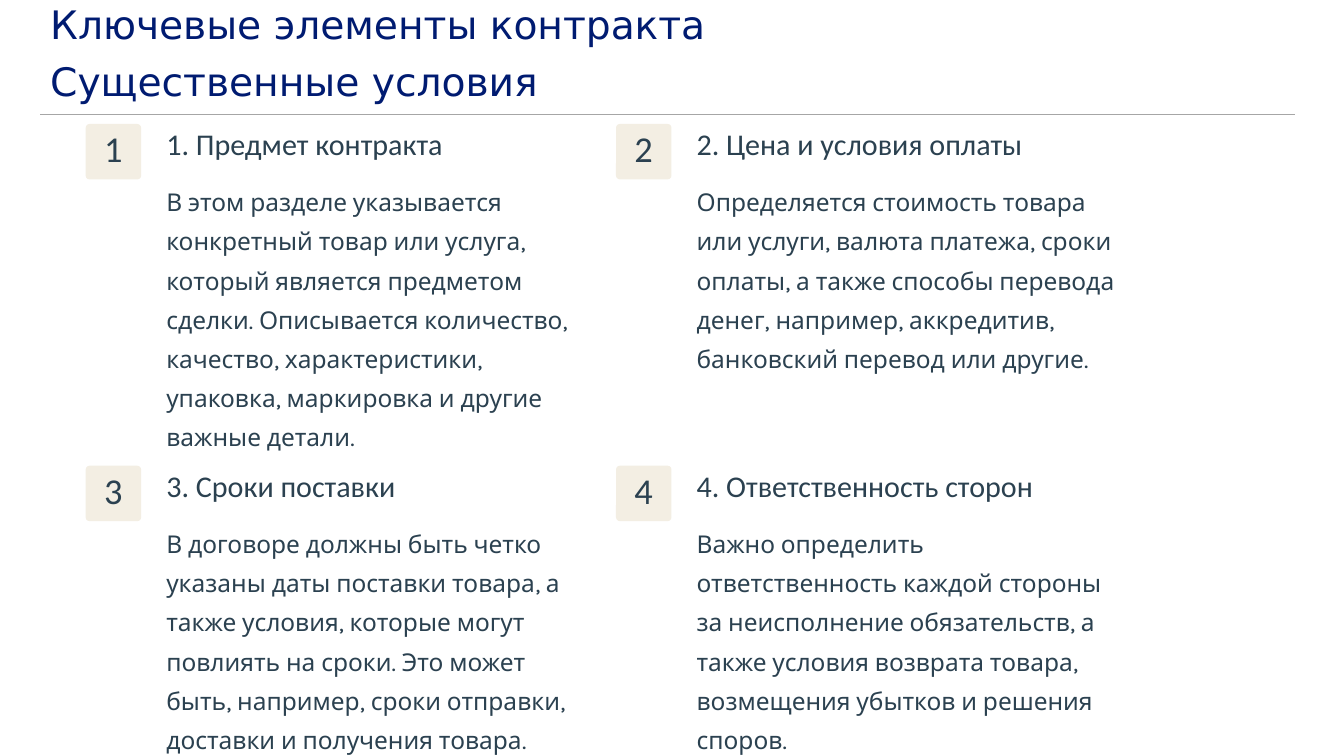
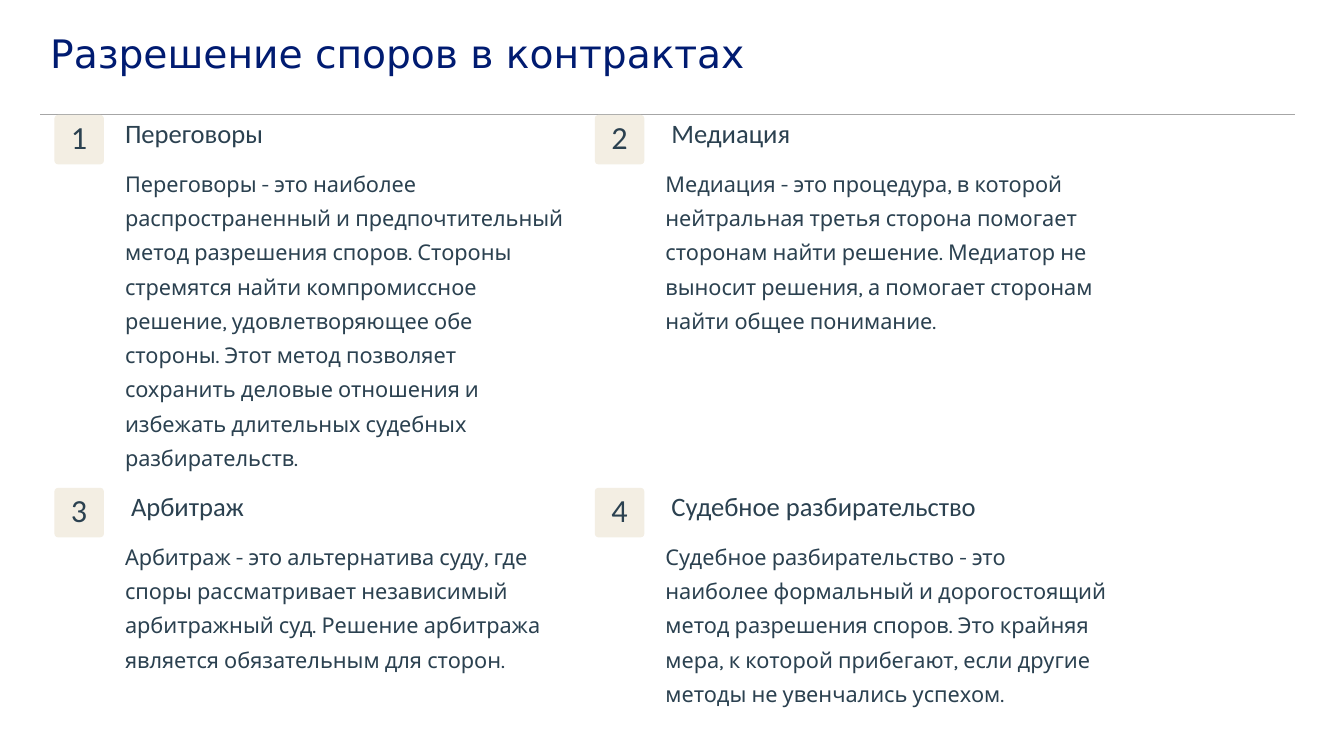
from dataclasses import dataclass
from pptx import Presentation
from pptx.dml.color import RGBColor
from pptx.enum.shapes import MSO_CONNECTOR, MSO_SHAPE
from pptx.enum.text import MSO_ANCHOR, PP_ALIGN
from pptx.oxml.ns import qn
from pptx.util import Inches, Pt

NAVY = RGBColor(0x00, 0x1B, 0x71)
SLATE = RGBColor(0x2B, 0x41, 0x50)
SAND = RGBColor(0xF3, 0xEE, 0xE3)
GREY = RGBColor(0xA6, 0xA6, 0xA6)


@dataclass
class Grid:
    left: float
    top: float
    col: float
    row: float
    badge: float
    indent: float
    drop: float
    width: float
    badge_size: float
    head_size: float
    head_line: float
    body_size: float
    body_line: float


class Deck:
    def __init__(self):
        self.prs = Presentation()
        self.prs.slide_width = Inches(13.33)
        self.prs.slide_height = Inches(7.5)
        self.slide = None

    def page(self, title):
        self.slide = self.prs.slides.add_slide(self.prs.slide_layouts[6])
        self.rule()
        frame = self.text(title, 0.4, 0.25, 12.44, 0.6, "DejaVu Sans", 28, NAVY, 0.9)
        frame.margin_left = frame.margin_right = Inches(0.1)
        frame.vertical_anchor = MSO_ANCHOR.MIDDLE
        for para in frame.paragraphs[1:]:
            para.space_before = Pt(11)

    def rule(self):
        line = self.slide.shapes.add_connector(
            MSO_CONNECTOR.STRAIGHT, Inches(0.4), Inches(1.14), Inches(12.84), Inches(1.14))
        line.line.color.rgb = GREY
        line.line.width = Pt(0.75)
        props = line._element.spPr
        props.append(props.makeelement(qn("a:effectLst"), {}))

    def style(self, frame, font, size, color, spacing):
        frame.word_wrap = True
        frame.margin_left = frame.margin_right = 0
        frame.margin_top = frame.margin_bottom = 0
        for para in frame.paragraphs:
            para.line_spacing = spacing
            for run in para.runs:
                run.font.name = font
                run.font.size = Pt(size)
                run.font.color.rgb = color

    def text(self, words, left, top, width, height, font, size, color, spacing):
        box = self.slide.shapes.add_textbox(
            Inches(left), Inches(top), Inches(width), Inches(height))
        box.text_frame.text = words
        self.style(box.text_frame, font, size, color, spacing)
        return box.text_frame

    def badge(self, number, left, top, side, size):
        shape = self.slide.shapes.add_shape(
            MSO_SHAPE.ROUNDED_RECTANGLE, Inches(left), Inches(top), Inches(side), Inches(side))
        shape.adjustments[0] = 0.07
        shape.shadow.inherit = False
        shape.fill.solid()
        shape.fill.fore_color.rgb = SAND
        shape.line.fill.background()
        frame = shape.text_frame
        frame.text = str(number)
        self.style(frame, "Calibri", size, SLATE, Pt(size))
        frame.vertical_anchor = MSO_ANCHOR.MIDDLE
        frame.paragraphs[0].alignment = PP_ALIGN.CENTER

    def items(self, grid, entries):
        for index, (head, body, shift) in enumerate(entries):
            row, col = divmod(index, 2)
            left = grid.left + col * grid.col
            top = grid.top + row * grid.row
            start = left + grid.indent
            self.badge(index + 1, left, top, grid.badge, grid.badge_size)
            self.text(head, start + shift, top, grid.width, 0.38,
                      "Calibri", grid.head_size, SLATE, Pt(grid.head_line))
            self.text(body, start, top + grid.drop, grid.width, 2.2,
                      "Karla", grid.body_size, SLATE, Pt(grid.body_line))


TERMS = [
    ("1. Предмет контракта",
     "В этом разделе указывается конкретный товар или услуга, который является предметом "
     "сделки. Описывается количество, качество, характеристики, упаковка, маркировка и "
     "другие важные детали.", 0),
    ("2. Цена и условия оплаты",
     "Определяется стоимость товара или услуги, валюта платежа, сроки оплаты, а также "
     "способы перевода денег, например, аккредитив, банковский перевод или другие.", 0),
    ("3. Сроки поставки",
     "В договоре должны быть четко указаны даты поставки товара, а также условия, которые "
     "могут повлиять на сроки. Это может быть, например, сроки отправки, доставки и "
     "получения товара.", 0),
    ("4. Ответственность сторон",
     "Важно определить ответственность каждой стороны за неисполнение обязательств, а также "
     "условия возврата товара, возмещения убытков и решения споров.", 0),
]

METHODS = [
    ("Переговоры",
     "Переговоры - это наиболее распространенный и предпочтительный метод разрешения споров. "
     "Стороны стремятся найти компромиссное решение, удовлетворяющее обе стороны. Этот метод "
     "позволяет сохранить деловые отношения и избежать длительных судебных разбирательств.", 0),
    ("Медиация",
     "Медиация - это процедура, в которой нейтральная третья сторона помогает сторонам найти "
     "решение. Медиатор не выносит решения, а помогает сторонам найти общее понимание.", 0.06),
    ("Арбитраж",
     "Арбитраж - это альтернатива суду, где споры рассматривает независимый арбитражный суд. "
     "Решение арбитража является обязательным для сторон.", 0.06),
    ("Судебное разбирательство",
     "Судебное разбирательство - это наиболее формальный и дорогостоящий метод разрешения "
     "споров. Это крайняя мера, к которой прибегают, если другие методы не увенчались "
     "успехом.", 0.06),
]


def main():
    deck = Deck()
    deck.page("Ключевые элементы контракта\nСущественные условия")
    deck.items(Grid(left=0.85, top=1.23, col=5.26, row=3.39, badge=0.55, indent=0.8,
                    drop=0.53, width=4.23, badge_size=26, head_size=21.5, head_line=27,
                    body_size=17.5, body_line=28), TERMS)
    deck.page("Разрешение споров в контрактах")
    deck.items(Grid(left=0.54, top=1.14, col=5.36, row=3.7, badge=0.49, indent=0.7,
                    drop=0.47, width=4.43, badge_size=23, head_size=19, head_line=24,
                    body_size=15.5, body_line=24.5), METHODS)
    deck.prs.save("out.pptx")


if __name__ == "__main__":
    main()
